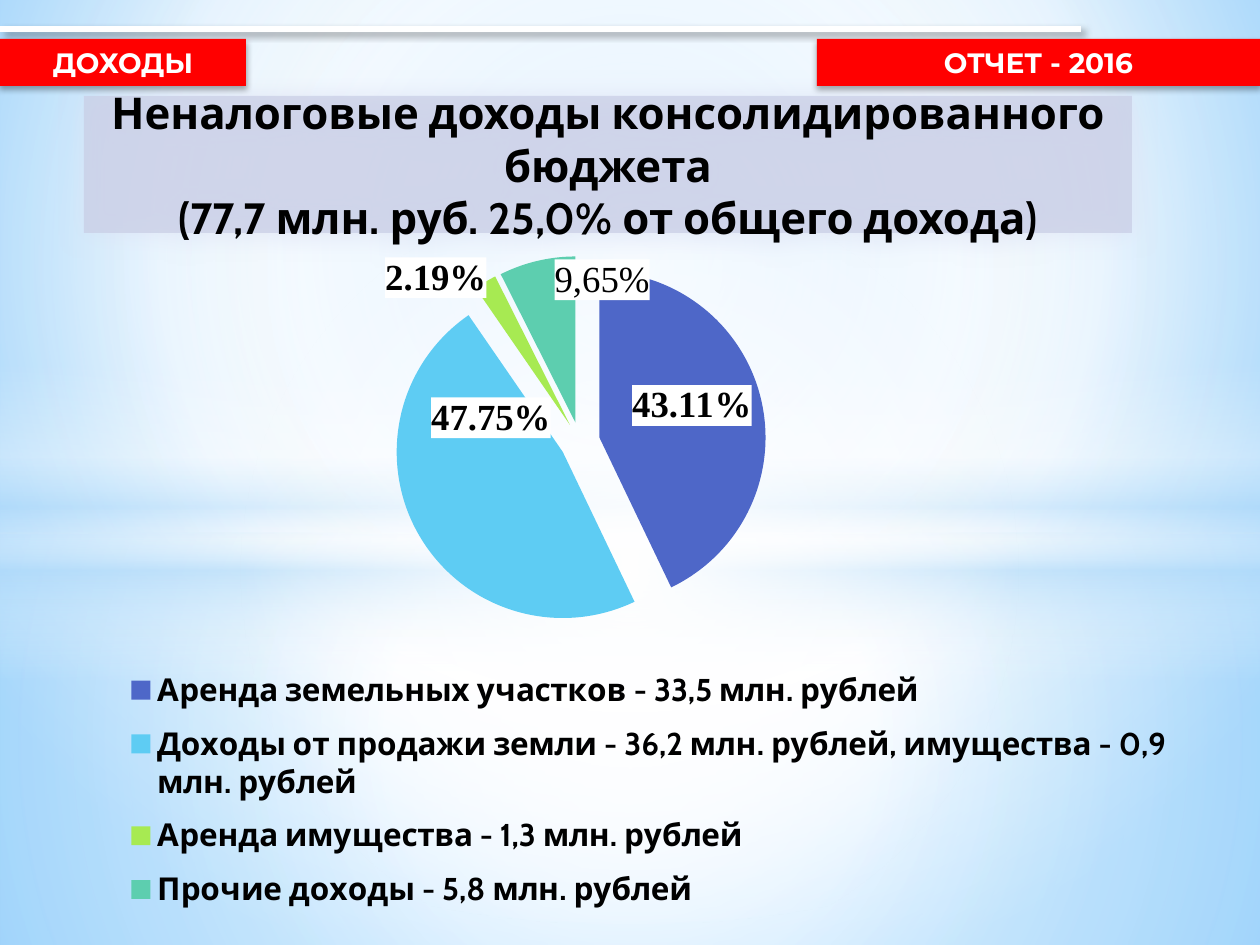
"""Build the slide on non-tax revenue of the consolidated budget."""
from dataclasses import dataclass

import pptx
import pptx.chart.data
import pptx.dml.color
import pptx.enum.chart
import pptx.enum.shapes
import pptx.enum.text
import pptx.oxml
import pptx.oxml.ns
import pptx.util
from lxml import etree

TITLE = ["Неналоговые доходы консолидированного бюджета",
         "(77,7 млн. руб. 25,0% от общего дохода)"]
TITLE_BOX = (84, 96, 1048, 137)
BANNERS = [("ОТЧЕТ - 2016", (817, 39, 443, 47)), ("ДОХОДЫ", (0, 39, 246, 47))]
RULE = (0, 29, 1081, 29)
CHART_BOX = (64, 256, 1147, 689)
PLOT = (0.04, 0, 0.82, 0.54)
LEGEND = (0.05, 0.58, 0.92, 0.39)
REVENUE = [
    ("Аренда земельных участков - 33,5 млн. рублей", 0.4311, "4E67C8", None, (14, -13)),
    ("Доходы от продажи земли - 36,2 млн. рублей, имущества - 0,9 млн. рублей",
     0.4775, "5ECCF3", None, (0, -76)),
    ("Аренда имущества - 1,3 млн. рублей", 0.0219, "A7EA52", None, (-88, -74)),
    ("Прочие доходы - 5,8 млн. рублей", 0.0746, "5DCEAF", "9,65%", (42, -59)),
]
BACKGROUND = [(0, "9ED5FF", 100), (60, "FFFFFF", 100), (100, "5BB9FF", 100)]
GLOWS = [
    ("RECTANGLE", (0, 533, 1260, 412),
     [(0, "FFFFFF", 91), (37, "FFFFFF", 76), (100, "B4DCFA", 79)], None),
    ("RECTANGLE", (0, 0, 1260, 533),
     [(0, "FFFFFF", 89), (48, "FFFFFF", 62), (100, "B4DCFA", 79)], None),
    ("RECTANGLE", (0, 365, 1260, 315),
     [(0, "FFFFFF", 0), (29, "FFFFFF", 30), (45, "B4DCFA", 40),
      (55, "FFFFFF", 26), (65, "B4DCFA", 60), (100, "FFFFFF", 0)], 90),
    ("OVAL", (0, 221, 1260, 703), [(0, "FFFFFF", 100), (54, "FFFFFF", 0)], None),
]


@dataclass
class Theme:
    white: str = "FFFFFF"
    ink: str = "000000"
    banner: str = "FF0000"
    panel: str = "C8CDE5"
    panel_glow: str = "DCE1F4"
    heading_font: str = "Cabin"
    banner_font: str = "Montserrat"
    label_font: str = "Times New Roman"
    title_size: int = 25
    banner_size: int = 16
    legend_size: int = 18
    label_size: int = 21


THEME = Theme()
SCALE = 914400 / 126
qn = pptx.oxml.ns.qn


def emu(*lengths):
    return [round(length * SCALE) for length in lengths]


def xml(text):
    return pptx.oxml.parse_xml(text.replace(">", f" {pptx.oxml.ns.nsdecls('a', 'c')}>", 1))


def colour(value, alpha=100):
    return f'<a:srgbClr val="{value}"><a:alpha val="{alpha * 1000}"/></a:srgbClr>'


def solid(value, alpha=100):
    return f"<a:solidFill>{colour(value, alpha)}</a:solidFill>"


def gradient(stops, angle=None, focus=(50, 50, 50, 50)):
    marks = "".join(f'<a:gs pos="{place * 1000}">{colour(value, alpha)}</a:gs>'
                    for place, value, alpha in stops)
    sides = " ".join(f'{side}="{share * 1000}"' for side, share in zip("ltrb", focus))
    course = f'<a:path path="circle"><a:fillToRect {sides}/></a:path>'
    if angle is not None:
        course = f'<a:lin ang="{angle * 60000}" scaled="0"/>'
    return f'<a:gradFill rotWithShape="1"><a:gsLst>{marks}</a:gsLst>{course}</a:gradFill>'


def set_fill(owner, item, fill):
    item.fill.solid()
    blank = owner.element.find(".//" + qn("a:solidFill"))
    blank.getparent().replace(blank, xml(fill))


def set_shadow(shape, value=None, alpha=0, blur=0, distance=0, angle=0):
    effects = etree.SubElement(shape.element.spPr, qn("a:effectLst"))
    if value:
        effects.append(xml(
            f'<a:outerShdw blurRad="{round(blur * 12700)}" dist="{round(distance * 12700)}" '
            f'dir="{angle * 60000}" rotWithShape="0">{colour(value, alpha)}</a:outerShdw>'))


def style(font, size, name, color, bold=True):
    font.size, font.name, font.bold = pptx.util.Pt(size), name, bold
    font.color.rgb = pptx.dml.color.RGBColor.from_string(color)


def write(frame, lines, **look):
    for number, line in enumerate(lines):
        para = frame.add_paragraph() if number else frame.paragraphs[0]
        para.alignment = pptx.enum.text.PP_ALIGN.CENTER
        span = para.add_run()
        span.text = line
        style(span.font, **look)


def add_panel(page, kind, place, fill, shadow=()):
    shape = page.shapes.add_shape(pptx.enum.shapes.MSO_SHAPE[kind], *emu(*place))
    set_fill(shape, shape, fill)
    shape.line.fill.background()
    set_shadow(shape, *shadow)
    return shape


def add_title(page):
    box = page.shapes.title
    box.left, box.top, box.width, box.height = emu(*TITLE_BOX)
    box.element.spPr.insert(1, xml('<a:prstGeom prst="bracketPair"><a:avLst/></a:prstGeom>'))
    set_fill(box, box, solid(THEME.panel, 70))
    set_shadow(box, THEME.panel_glow, 90, 15, 0, 45)
    frame = box.text_frame
    frame.margin_left = frame.margin_right = frame.margin_top = frame.margin_bottom = 0
    frame.word_wrap = True
    frame.auto_size = pptx.enum.text.MSO_AUTO_SIZE.NONE
    frame.vertical_anchor = pptx.enum.text.MSO_ANCHOR.MIDDLE
    write(frame, TITLE, size=THEME.title_size, name=THEME.heading_font, color=THEME.ink)
    box.element.getparent().append(box.element)


def layout(**values):
    settings = "".join(f'<c:{key} val="{value}"/>' for key, value in values.items())
    return xml(f"<c:layout><c:manualLayout>{settings}</c:manualLayout></c:layout>")


def placed(box, **target):
    return layout(**target, xMode="edge", yMode="edge", **dict(zip("xywh", box)))


def add_label(root, series, number, text, shift):
    label = series.points[number].data_label
    look = dict(size=THEME.label_size, name=THEME.label_font, color=THEME.ink, bold=not text)
    if text:
        write(label.text_frame, [text], **look)
    style(label.font, **look)
    label.position = pptx.enum.chart.XL_LABEL_POSITION.CENTER
    node = root.findall(".//" + qn("c:dLbl"))[number]
    x, y = (round(move / size, 2) for move, size in zip(shift, CHART_BOX[2:]))
    node.find(qn("c:idx")).addnext(layout(x=x, y=y))
    node.find(qn("c:txPr")).addprevious(xml(f"<c:spPr>{solid(THEME.white)}</c:spPr>"))


def add_chart(page):
    data = pptx.chart.data.CategoryChartData(number_format="0.00%")
    data.categories = [name for name, *_ in REVENUE]
    data.add_series("Series 1", [value for _, value, *_ in REVENUE])
    chart = page.shapes.add_chart(pptx.enum.chart.XL_CHART_TYPE.PIE, *emu(*CHART_BOX), data).chart
    chart.has_title = False
    style(chart.font, THEME.legend_size, THEME.heading_font, THEME.ink, bold=False)
    chart.plots[0].vary_by_categories = True
    chart.has_legend = True
    chart.legend.position = pptx.enum.chart.XL_LEGEND_POSITION.BOTTOM
    chart.legend.include_in_layout = False
    style(chart.legend.font, THEME.legend_size, THEME.heading_font, THEME.ink)
    root = chart.element
    legend = root.find(".//" + qn("c:legend"))
    area = root.find(".//" + qn("c:plotArea"))
    for owner in (legend, area):
        for automatic in owner.findall(qn("c:layout")):
            owner.remove(automatic)
    legend.find(qn("c:legendPos")).addnext(placed(LEGEND))
    area.insert(0, placed(PLOT, layoutTarget="inner"))
    root.find(".//" + qn("c:ser")).find(qn("c:tx")).addnext(
        xml('<c:explosion val="12"></c:explosion>'))
    series = chart.plots[0].series[0]
    for number, (_, _, value, text, shift) in enumerate(REVENUE):
        fill = series.points[number].format.fill
        fill.solid()
        fill.fore_color.rgb = pptx.dml.color.RGBColor.from_string(value)
        add_label(root, series, number, text, shift)


def main():
    deck = pptx.Presentation()
    deck.slide_width, deck.slide_height = emu(1260, 945)
    page = deck.slides.add_slide(deck.slide_layouts[5])
    set_fill(page, page.background, gradient(BACKGROUND, focus=(20, 10, 20, 60)))
    for kind, place, stops, angle in GLOWS:
        add_panel(page, kind, place, gradient(stops, angle))
    rule = page.shapes.add_connector(pptx.enum.shapes.MSO_CONNECTOR.STRAIGHT, *emu(*RULE))
    rule.line.width = pptx.util.Pt(3)
    rule.line.color.rgb = pptx.dml.color.RGBColor.from_string(THEME.white)
    set_shadow(rule, THEME.ink, 40, 4, 3, 45)
    add_title(page)
    for text, place in BANNERS:
        banner = add_panel(page, "RECTANGLE", place, solid(THEME.banner),
                           (THEME.ink, 32, 3.5, 2.2, 90))
        banner.text_frame.vertical_anchor = pptx.enum.text.MSO_ANCHOR.MIDDLE
        write(banner.text_frame, [text], size=THEME.banner_size,
              name=THEME.banner_font, color=THEME.white)
    add_chart(page)
    deck.save("out.pptx")


if __name__ == "__main__":
    main()
